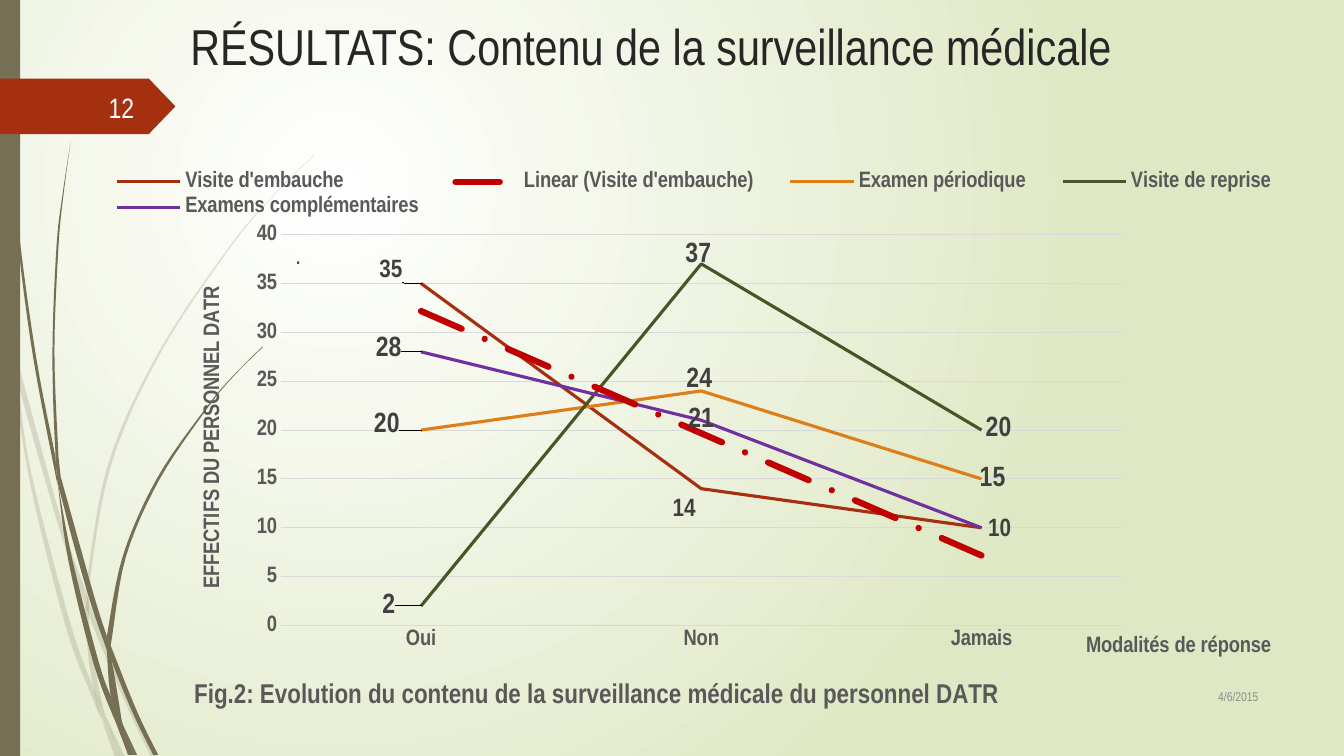
from lxml import etree
from pptx import Presentation
from pptx.chart.data import CategoryChartData
from pptx.dml.color import RGBColor
from pptx.enum.chart import XL_CHART_TYPE, XL_LABEL_POSITION, XL_LEGEND_POSITION, XL_TICK_MARK
from pptx.enum.shapes import MSO_SHAPE
from pptx.enum.text import MSO_ANCHOR, PP_ALIGN
from pptx.oxml import parse_xml
from pptx.oxml.ns import nsdecls, qn
from pptx.util import Inches, Pt

FONT = "Arial Narrow"
BROWN, RUST, GREY, PALE = "766F54", "A53010", "595959", "D9D9D9"
TEXTS = [
    ("RÉSULTATS: Contenu de la surveillance médicale", (1.79, 0.1, 10.46, 0.87), 36, "262626", PP_ALIGN.LEFT, MSO_ANCHOR.TOP, 0),
    (".", (2.83, 2.33, 9.75, 4.13), 18, "404040", PP_ALIGN.LEFT, MSO_ANCHOR.TOP, 10),
    ("4/6/2015", (11.33, 6.7, 1.25, 0.41), 9, "8C8C8C", PP_ALIGN.RIGHT, MSO_ANCHOR.MIDDLE, 0),
    ("12", (0.58, 0.86, 0.85, 0.4), 20, "FEFFFF", PP_ALIGN.RIGHT, MSO_ANCHOR.MIDDLE, 0),
]
CHART_BOX = (0.72, 1.5, 12.3, 5.61)
CATEGORIES = ["Oui", "Non", "Jamais"]
SERIES = [
    ("Visite d'embauche", RUST, 18, [35, 14, 10], [(-0.3, -0.12), (-0.17, 0.21), (0.18, 0.02)]),
    ("Examen périodique", "DE7E18", 20, [20, 24, 15], [(-0.34, -0.05), (-0.02, -0.11), (0.11, 0)]),
    ("Visite de reprise", "495526", 20, [2, 37, 20], [(-0.32, 0), (-0.03, -0.09), (0.17, -0.01)]),
    ("Examens complémentaires", "7030A0", 20, [28, 21, 10], [(-0.32, -0.03), (0, 0), None]),
]
CHART_TITLE = ("Fig.2: Evolution du contenu de la surveillance médicale du personnel DATR", 19.5, (0.094, 0.93))
VALUE_TITLE = ("EFFECTIFS DU PERSONNEL DATR", 16, (0.1, 0.234))
CATEGORY_TITLE = ("Modalités de réponse", 16, (0.814, 0.85))
PALE_BLADES = [
    ([(0.11, 3.5), (0.09, 3.22), (0, 2.82)], [(0, 2.99), (0.1, 3.44), (0.11, 3.5)]),
    ([(0.14, 3.45), (0.17, 3.76), (0.58, 5.22), (0.84, 5.99)], [(0.85, 5.86), (0.62, 5.2), (0.14, 3.45)]),
    ([(0.88, 5.96), (0.88, 6.1), (1.23, 6.94), (1.5, 7.51)], [(1.55, 7.51), (1.27, 6.92), (0.92, 6.07), (0.88, 5.96)]),
    ([(1.05, 7.11), (1.19, 7.51)], [(1.24, 7.51), (1.05, 7.11)]),
    ([(0.11, 3.5), (0.28, 4.7), (0.65, 6.21), (0.92, 6.93), (1.01, 7.14)], [(0.93, 6.83), (0.7, 6.19), (0.31, 4.69), (0.17, 3.76), (0.11, 3.5)]),
    ([(0.84, 5.99), (0.87, 6.46), (0.93, 6.83), (1.05, 7.11)], [(1.03, 7.06), (0.91, 6.46), (0.88, 6.1), (0.84, 5.99)]),
    ([(3.12, 1.53), (2.89, 1.75), (2.68, 1.97), (2.28, 2.44), (1.58, 3.48), (1.07, 4.61), (0.85, 5.84)],
     [(0.88, 5.96), (0.88, 5.84), (1.1, 4.62), (1.6, 3.49), (2.29, 2.45), (2.68, 1.98), (2.9, 1.75), (3.12, 1.54)]),
    ([(1.01, 7.14), (1.14, 7.51)], [(1.19, 7.51), (1.01, 7.14)]),
    ([(0.85, 5.86), (0.84, 5.99)], [(0.88, 6.1), (0.88, 5.96), (0.85, 5.86)]),
    ([(0.93, 6.83), (0.99, 7.07), (1.19, 7.51)], [(1.19, 7.51), (1.05, 7.11), (0.93, 6.83)]),
]
DARK_BLADES = [
    ([(0.03, 0), (0.07, 1.1), (0.17, 2.33), (0.33, 3.55), (0.57, 4.81)], [(0.55, 4.53), (0.36, 3.55), (0.19, 2.32), (0.08, 1.09), (0.04, 0)]),
    ([(0.6, 4.72), (0.64, 5.05), (0.88, 5.92), (1.06, 6.45)], [(1.06, 6.31), (0.93, 5.9), (0.6, 4.72)]),
    ([(1.1, 6.41), (1.11, 6.56), (1.32, 7.08), (1.52, 7.49)], [(1.57, 7.49), (1.36, 7.06), (1.1, 6.41)]),
    ([(0.57, 4.77), (0.68, 5.57), (0.93, 6.59), (1.17, 7.22)], [(1.1, 6.91), (0.98, 6.57), (0.72, 5.56), (0.57, 4.77)]),
    ([(0.7, 1.41), (0.62, 1.93), (0.56, 2.45), (0.52, 3.49), (0.55, 4.49), (0.6, 4.72)], [(0.58, 4.53), (0.54, 3.49), (0.58, 2.45), (0.63, 1.93), (0.7, 1.41)]),
    ([(1.22, 7.19), (1.33, 7.49)], [(1.36, 7.49), (1.22, 7.19)]),
    ([(0.55, 4.49), (0.57, 4.77), (0.64, 5.05)], [(0.6, 4.72), (0.55, 4.49)]),
    ([(2.6, 3.44), (2.31, 3.73), (2.04, 4.05), (1.56, 4.74), (1.22, 5.51), (1.06, 6.31)],
     [(1.1, 6.41), (1.11, 6.33), (1.25, 5.52), (1.58, 4.76), (2.05, 4.06), (2.31, 3.74), (2.61, 3.44)]),
    ([(1.17, 7.22), (1.27, 7.49)], [(1.31, 7.49), (1.17, 7.22)]),
    ([(1.06, 6.45), (1.1, 6.91), (1.22, 7.19)], [(1.21, 7.16), (1.11, 6.56), (1.06, 6.45)]),
    ([(1.06, 6.31), (1.06, 6.45)], [(1.11, 6.56), (1.1, 6.41), (1.06, 6.31)]),
    ([(1.1, 6.91), (1.17, 7.22), (1.3, 7.49)], [(1.33, 7.49), (1.22, 7.19), (1.1, 6.91)]),
]

def style_font(font, size, value, bold=True):
    font.name, font.size, font.bold = FONT, Pt(size), bold
    font.color.rgb = RGBColor.from_string(value)

def style_line(line, value, width):
    line.color.rgb, line.width = RGBColor.from_string(value), Pt(width)

def paint(shape, value):
    shape.shadow.inherit = False
    shape.fill.solid()
    shape.fill.fore_color.rgb = RGBColor.from_string(value)
    shape.line.fill.background()

def smooth_curve(points, steps=6):
    padded = [points[0], *points, points[-1]]
    curve = [points[0]]
    for a, b, c, d in zip(padded, padded[1:], padded[2:], padded[3:]):
        for t in (step / steps for step in range(1, steps + 1)):
            curve.append([
                (2 * q + (r - p) * t + (2 * p - 5 * q + 4 * r - s) * t ** 2 + (3 * q - p - 3 * r + s) * t ** 3) / 2
                for p, q, r, s in zip(a, b, c, d)])
    return [(Inches(x), Inches(y)) for x, y in curve]

def add_blade(slide, opacity, near_edge, far_edge):
    outline = smooth_curve(near_edge) + smooth_curve(far_edge)
    builder = slide.shapes.build_freeform(*outline[0], scale=1.0)
    builder.add_line_segments(outline[1:], close=True)
    blade = builder.convert_to_shape()
    paint(blade, BROWN)
    fill_color = blade._element.spPr.find(qn("a:solidFill"))[0]
    etree.SubElement(fill_color, qn("a:alpha")).set("val", str(opacity * 1000))

def add_text(slide, text, box, size, value, alignment, anchor, space_before):
    frame = slide.shapes.add_textbox(*map(Inches, box)).text_frame
    frame.word_wrap, frame.vertical_anchor, frame.text = True, anchor, text
    paragraph = frame.paragraphs[0]
    paragraph.alignment, paragraph.space_before = alignment, Pt(space_before)
    style_font(paragraph.runs[0].font, size, value, False)

def place(element, position, after=None, modes=("xMode", "yMode")):
    for old in element.findall(qn("c:layout")):
        element.remove(old)
    entries = [(mode, "edge") for mode in modes] + list(zip("xywh", position))
    inner = '<c:layoutTarget val="inner"/>' if after is None else ""
    body = "".join(f'<c:{tag} val="{value}"/>' for tag, value in entries)
    layout = parse_xml(f'<c:layout {nsdecls("c")}><c:manualLayout>{inner}{body}</c:manualLayout></c:layout>')
    element.insert(0 if after is None else element.index(element.find(qn(after))) + 1, layout)

def set_title(title, text, size, position):
    title.text_frame.text = text
    style_font(title.text_frame.paragraphs[0].runs[0].font, size, GREY)
    place(title._element, position, "c:tx")

def style_series(series, value, size, offsets):
    series.smooth = False
    style_line(series.format.line, value, 2.25)
    labels = series.data_labels
    labels.show_value, labels.position = True, XL_LABEL_POSITION.CENTER
    style_font(labels.font, size, "404040")
    labels._element.append(parse_xml(
        f'<c:extLst {nsdecls("c")}><c:ext uri="{{CE6537A1-D6FC-4f65-9D91-7224C49458BB}}" '
        'xmlns:c15="http://schemas.microsoft.com/office/drawing/2012/chart">'
        '<c15:showLeaderLines val="0"/></c:ext></c:extLst>'))
    for index, offset in enumerate(offsets):
        label = series.points[index].data_label
        label.position = XL_LABEL_POSITION.CENTER
        element = series._element.xpath(f"c:dLbls/c:dLbl[c:idx/@val={index}]")[0]
        if offset is None:
            for child in element[1:]:
                element.remove(child)
            etree.SubElement(element, qn("c:delete")).set("val", "1")
        else:
            style_font(label.font, size, "404040")
            place(element, [round(part / side, 4) for part, side in zip(offset, CHART_BOX[2:])], "c:idx", ())

def add_line_chart(slide):
    data = CategoryChartData()
    data.categories = CATEGORIES
    for name, _, _, values, _ in SERIES:
        data.add_series(name, values)
    chart = slide.shapes.add_chart(XL_CHART_TYPE.LINE, *map(Inches, CHART_BOX), data).chart
    style_font(chart.font, 16, GREY)
    set_title(chart.chart_title, *CHART_TITLE)
    chart.has_legend = True
    chart.legend.position, chart.legend.include_in_layout = XL_LEGEND_POSITION.BOTTOM, False
    style_font(chart.legend.font, 16, GREY)
    place(chart.legend._element, (0.012, 0.027, 0.978, 0.1), "c:legendPos")
    place(chart._chartSpace.chart.plotArea, (0.168, 0.148, 0.678, 0.694))
    value_axis = chart.value_axis
    for axis, title in ((chart.category_axis, CATEGORY_TITLE), (value_axis, VALUE_TITLE)):
        axis.major_tick_mark = axis.minor_tick_mark = XL_TICK_MARK.NONE
        style_font(axis.tick_labels.font, 16, GREY)
        set_title(axis.axis_title, *title)
    value_axis.axis_title.text_frame._txBody.bodyPr.set("rot", "-5400000")
    value_axis.minimum_scale, value_axis.maximum_scale, value_axis.major_unit = 0, 40, 5
    value_axis.format.line.fill.background()
    for line in (chart.category_axis.format.line, value_axis.major_gridlines.format.line):
        style_line(line, PALE, 0.75)
    plot = chart.plots[0]
    plot.vary_by_categories = False
    for series, (_, value, size, _, offsets) in zip(plot.series, SERIES):
        style_series(series, value, size, offsets)
    plot.series[0]._element.find(qn("c:cat")).addprevious(parse_xml(
        f'<c:trendline {nsdecls("c", "a")}><c:name>Linear ({SERIES[0][0]})</c:name><c:spPr>'
        f'<a:ln w="{Pt(4.5)}" cap="rnd"><a:solidFill><a:srgbClr val="C00000"/></a:solidFill>'
        '<a:prstDash val="lgDashDot"/></a:ln></c:spPr><c:trendlineType val="linear"/>'
        '<c:dispRSqr val="0"/><c:dispEq val="0"/></c:trendline>'))

presentation = Presentation()
presentation.slide_width, presentation.slide_height = Inches(13.33), Inches(7.5)
slide = presentation.slides.add_slide(presentation.slide_layouts[6])
background = slide.background.fill
background.gradient()
for stop, value in zip(background.gradient_stops, ("FFFFFF", "DFE8C4")):
    stop.color.rgb = RGBColor.from_string(value)
direction = slide._element.xpath("p:cSld/p:bg//a:gradFill/a:lin")[0]
direction.getparent().replace(direction, parse_xml(
    f'<a:path {nsdecls("a")} path="circle"><a:fillToRect l="50000" t="50000" r="100000" b="100000"/></a:path>'))
for opacity, blades in ((20, PALE_BLADES), (100, DARK_BLADES)):
    for blade in blades:
        add_blade(slide, opacity, *blade)
bar = slide.shapes.add_shape(MSO_SHAPE.RECTANGLE, 0, 0, Inches(0.2), presentation.slide_height)
paint(bar, BROWN)
number_tag = slide.shapes.add_shape(MSO_SHAPE.PENTAGON, 0, Inches(0.78), Inches(1.74), Inches(0.55))
number_tag.adjustments[0] = 0.48
paint(number_tag, RUST)
for text in TEXTS:
    add_text(slide, *text)
add_line_chart(slide)
presentation.save("out.pptx")
